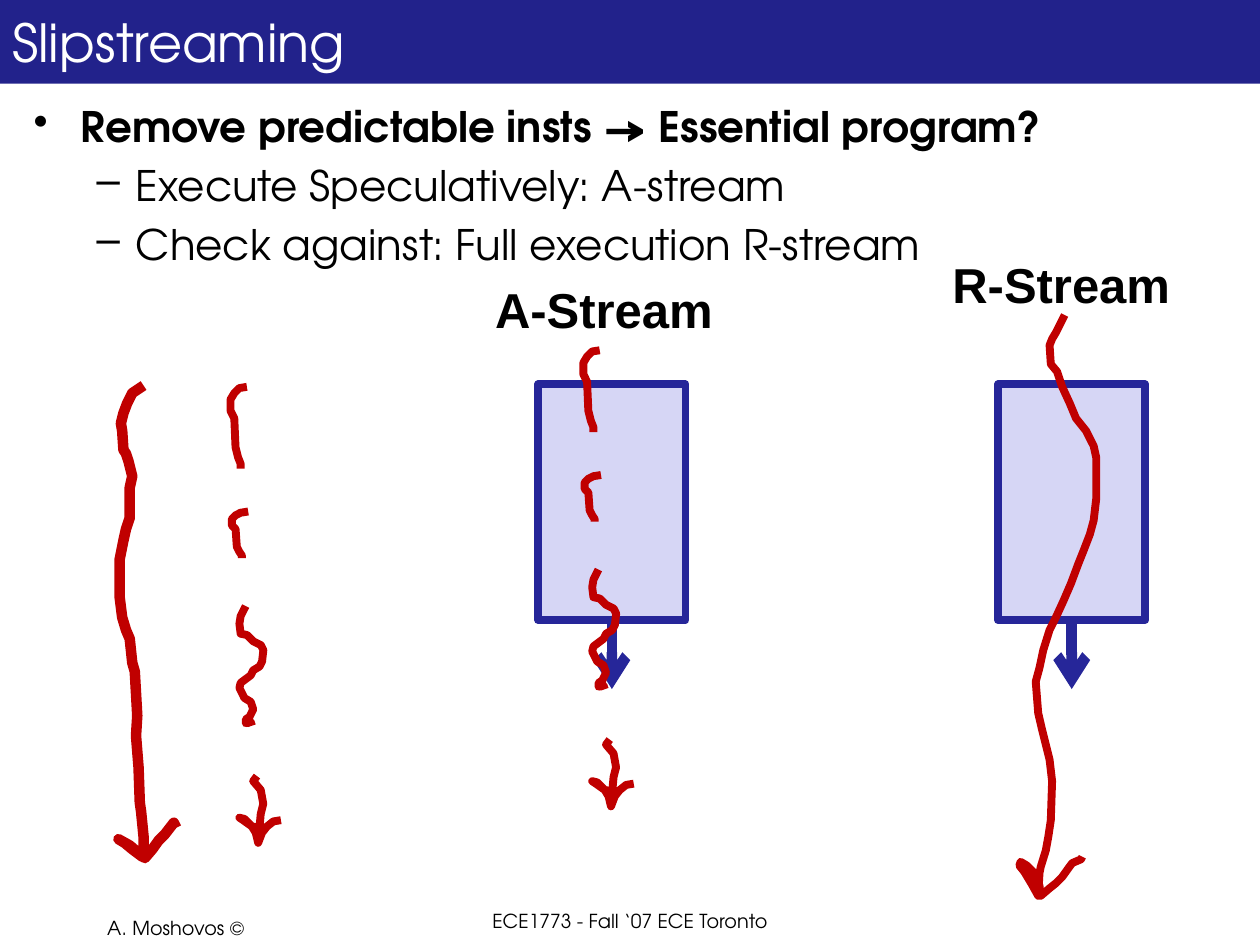
from dataclasses import dataclass

from lxml.etree import SubElement
from pptx import Presentation
from pptx.dml.color import RGBColor
from pptx.enum.shapes import MSO_CONNECTOR, MSO_SHAPE
from pptx.enum.text import MSO_ANCHOR, PP_ALIGN
from pptx.oxml.ns import qn
from pptx.util import Cm, Pt


@dataclass(frozen=True)
class Theme:
    banner: RGBColor = RGBColor(0x22, 0x22, 0x8B)
    outline: RGBColor = RGBColor(0x26, 0x26, 0x99)
    core: RGBColor = RGBColor(0xD6, 0xD6, 0xF5)
    ink: RGBColor = RGBColor(0xC0, 0x00, 0x00)
    text: RGBColor = RGBColor(0x00, 0x00, 0x00)
    light: RGBColor = RGBColor(0xFF, 0xFF, 0xFF)
    main_font: str = "TeX Gyre Adventor"
    label_font: str = "Arial"
    title_size: Pt = Pt(30)
    label_size: Pt = Pt(28)
    body_size: Pt = Pt(24)
    footer_size: Pt = Pt(11)
    thin: Pt = Pt(4.5)
    thick: Pt = Pt(6)


class SlideBuilder:
    def __init__(self, slide, theme):
        self.shapes = slide.shapes
        self.theme = theme

    def style(self, paragraph, size, color=None, font=None, bold=False):
        paragraph.font.size = size
        paragraph.font.name = font or self.theme.main_font
        paragraph.font.color.rgb = color or self.theme.text
        paragraph.font.bold = bold

    def box(self, left, top, width, height, fill, outline=None):
        box = self.shapes.add_shape(
            MSO_SHAPE.RECTANGLE, Cm(left), Cm(top), Cm(width), Cm(height))
        box.shadow.inherit = False
        box.fill.solid()
        box.fill.fore_color.rgb = fill
        if outline is None:
            box.line.fill.background()
        else:
            box.line.color.rgb = outline
            box.line.width = self.theme.thin
        return box

    def title(self, text):
        banner = self.box(0, 0, 25.4, 1.69, self.theme.banner)
        banner.text_frame.text = text
        banner.text_frame.word_wrap = True
        banner.text_frame.vertical_anchor = MSO_ANCHOR.MIDDLE
        heading = banner.text_frame.paragraphs[0]
        heading.alignment = PP_ALIGN.LEFT
        self.style(heading, self.theme.title_size, self.theme.light)

    def text(self, left, top, width, height, text, size, align=PP_ALIGN.LEFT,
             font=None, bold=False):
        frame = self.shapes.add_textbox(
            Cm(left), Cm(top), Cm(width), Cm(height)).text_frame
        frame.word_wrap = True
        frame.text = text
        frame.paragraphs[0].alignment = align
        self.style(frame.paragraphs[0], size, font=font, bold=bold)

    def bullets(self, left, top, width, height, items):
        frame = self.shapes.add_textbox(
            Cm(left), Cm(top), Cm(width), Cm(height)).text_frame
        frame.word_wrap = True
        frame.text = "\n".join(text for text, level in items)
        marks = [("•", 0.95, 0.95), ("–", 2.06, 0.79)]
        for paragraph, (text, level) in zip(frame.paragraphs, items):
            mark, margin, hanging = marks[level]
            paragraph.level = level
            paragraph.space_before = Pt(4.8)
            self.style(paragraph, self.theme.body_size, bold=level == 0)
            properties = paragraph._p.get_or_add_pPr()
            properties.set("marL", str(Cm(margin)))
            properties.set("indent", str(-Cm(hanging)))
            SubElement(properties, qn("a:buChar")).set("char", mark)

    def arrow(self, x, top, bottom):
        arrow = self.shapes.add_connector(
            MSO_CONNECTOR.STRAIGHT, Cm(x), Cm(top), Cm(x), Cm(bottom))
        arrow.line.color.rgb = self.theme.outline
        arrow.line.width = self.theme.thick
        SubElement(arrow.line._get_or_add_ln(), qn("a:tailEnd")).set("type", "arrow")
        SubElement(arrow._element.spPr, qn("a:effectLst"))

    def processor(self, left):
        top, width, height = 7.75, 2.97, 4.75
        self.box(left, top, width, height, self.theme.core, self.theme.outline)
        self.arrow(left + width / 2, top + height, 13.89)

    def stroke(self, points, width, shift=(0, 0)):
        start, *rest = [(x + shift[0], y + shift[1]) for x, y in points]
        builder = self.shapes.build_freeform(*start, scale=Cm(0.0254))
        builder.add_line_segments(rest, close=False)
        stroke = builder.convert_to_shape()
        stroke.shadow.inherit = False
        stroke.fill.background()
        stroke.line.color.rgb = self.theme.ink
        stroke.line.width = width
        SubElement(stroke.line._get_or_add_ln(), qn("a:round"))


FULL_STREAM = [
    (114, 306), (105, 312), (101, 320), (98, 328), (96, 336), (97, 342),
    (98, 357), (100, 360), (102, 366), (105, 378), (103, 387), (103, 411),
    (100, 420), (98, 429), (95, 444), (95, 474), (97, 490), (100, 500),
    (103, 507), (105, 526), (107, 533), (109, 568), (108, 584), (110, 609),
    (111, 637), (112, 644), (114, 664), (114, 672), (113, 680), (105, 674),
    (99, 669), (94, 666), (103, 671), (110, 677), (115, 681), (121, 674),
    (126, 667), (131, 662), (138, 653), (140, 657)]

CHECKED_STREAM = [
    (845, 250), (838, 264), (835, 269), (833, 274), (834, 289), (839, 295),
    (843, 307), (849, 320), (854, 332), (862, 342), (868, 354), (870, 363),
    (870, 396), (868, 413), (865, 424), (860, 437), (856, 447), (850, 463),
    (844, 477), (838, 490), (833, 500), (828, 516), (825, 530), (822, 541),
    (824, 566), (827, 579), (830, 591), (833, 603), (835, 620), (834, 651),
    (832, 664), (830, 675), (826, 688), (825, 693), (824, 711), (819, 702),
    (813, 692), (809, 687), (810, 684), (815, 687), (820, 692), (825, 703),
    (826, 711), (833, 705), (838, 701), (843, 696), (848, 689), (851, 685),
    (858, 682), (859, 680)]

REDUCED_STREAM = [
    [(196, 307), (190, 308), (186, 312), (183, 317), (183, 326), (186, 332),
     (187, 355), (189, 363), (191, 368), (191, 372)],
    [(197, 406), (191, 407), (187, 409), (184, 412), (184, 417), (187, 420),
     (188, 434), (190, 438), (192, 441), (192, 443)],
    [(195, 481), (191, 489), (190, 495), (191, 503), (196, 504), (201, 509),
     (207, 512), (209, 516), (208, 525), (206, 529), (201, 532), (199, 536),
     (191, 542), (190, 546), (194, 554), (199, 557), (201, 563), (198, 569),
     (195, 571), (195, 574), (199, 573), (200, 576)],
    [(204, 616), (201, 620), (207, 627), (209, 638), (207, 646), (206, 657),
     (200, 656), (193, 651), (190, 649), (194, 650), (200, 656), (203, 661),
     (205, 669), (208, 661), (212, 656), (217, 652), (223, 651)]]


def main():
    theme = Theme()
    deck = Presentation()
    deck.slide_width, deck.slide_height = Cm(25.4), Cm(19.05)
    slide = SlideBuilder(deck.slides.add_slide(deck.slide_layouts[6]), theme)

    slide.title("Slipstreaming")
    slide.bullets(0.43, 1.91, 24.56, 16.31, [
        ("Remove predictable insts → Essential program?", 0),
        ("Execute Speculatively: A-stream", 1),
        ("Check against: Full execution R-stream", 1)])
    slide.text(1.91, 18.34, 5.28, 1.07, "A. Moshovos ©", theme.footer_size)
    slide.text(8.26, 18.21, 8.89, 1.07, "ECE1773 - Fall ‘07 ECE Toronto",
               theme.footer_size, PP_ALIGN.CENTER)

    for left in (10.85, 20.12):
        slide.processor(left)
    slide.stroke(FULL_STREAM, theme.thick)
    slide.stroke(CHECKED_STREAM, theme.thin)
    for shift in ((0, 0), (280, -29)):
        for piece in REDUCED_STREAM:
            slide.stroke(piece, theme.thin, shift)

    for name, left, top in (("A-Stream", 9.73, 5.51), ("R-Stream", 18.95, 5)):
        slide.text(left, top, 5.72, 1.45, name, theme.label_size,
                   font=theme.label_font, bold=True)
    deck.save("out.pptx")


if __name__ == "__main__":
    main()
